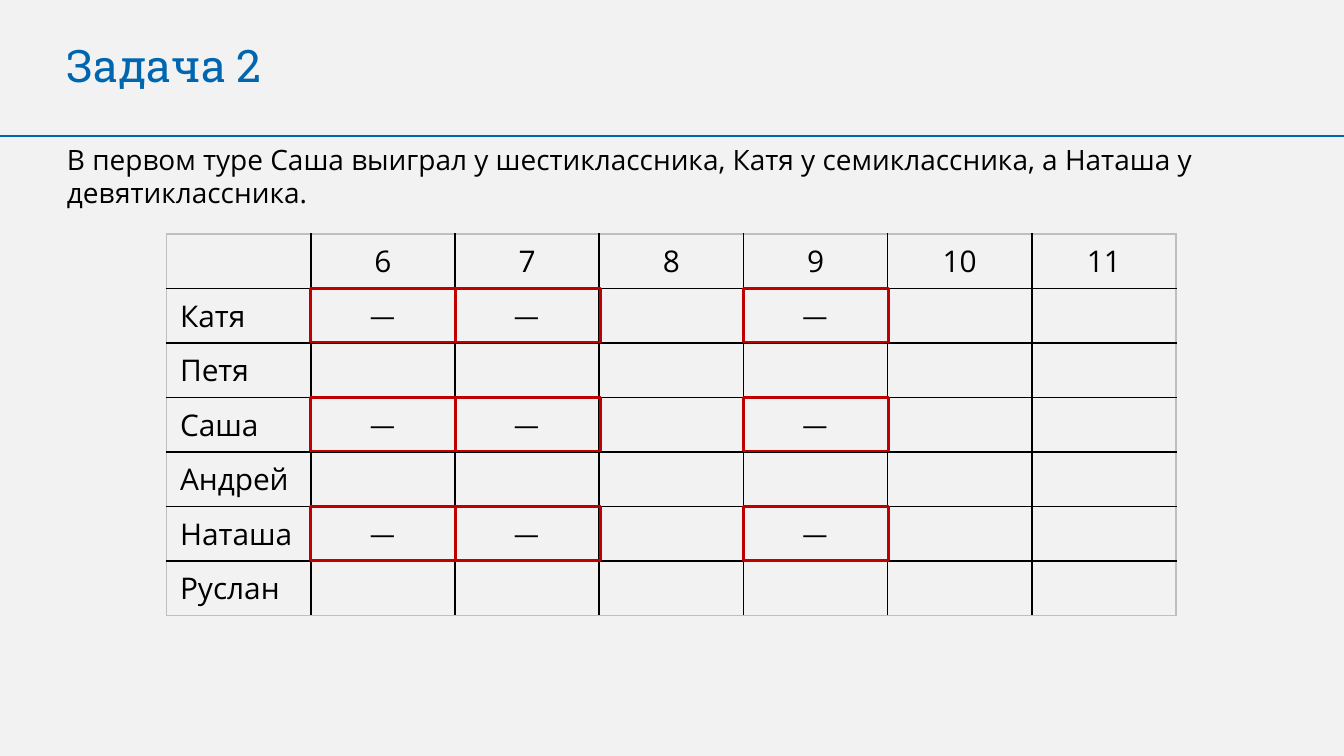
from dataclasses import dataclass
from itertools import product

from lxml.etree import SubElement
from pptx import Presentation
from pptx.dml.color import RGBColor
from pptx.enum.shapes import MSO_CONNECTOR, MSO_SHAPE
from pptx.enum.text import MSO_ANCHOR, MSO_AUTO_SIZE, PP_ALIGN
from pptx.oxml import parse_xml
from pptx.oxml.ns import nsdecls, qn
from pptx.util import Inches, Pt


@dataclass(frozen=True)
class Theme:
    background: str = "F2F2F2"
    accent: str = "0066B0"
    ink: str = "000000"
    frame: str = "BFBFBF"
    mark: str = "C00000"
    heading_font: str = "Roboto Slab"
    body_font: str = "Open Sans"
    heading_size: float = 24
    cell_size: float = 16
    body_size: float = 15
    dash_size: float = 13.5
    rule_width: float = 1
    mark_width: float = 1.5


class TaskSlide:
    """Holds the theme and the current slide and draws each kind of element."""

    def __init__(self, slide, theme):
        self.slide = slide
        self.theme = theme
        fill = slide.background.fill
        fill.solid()
        fill.fore_color.rgb = RGBColor.from_string(theme.background)

    def style(self, paragraph, size, font=None, color=None):
        for run in paragraph.runs:
            run.font.size = Pt(size)
            run.font.name = font or self.theme.body_font
            run.font.color.rgb = RGBColor.from_string(color or self.theme.ink)

    def text(self, words, left, top, width, height, size, font=None, color=None, wrap=True):
        frame = self.slide.shapes.add_textbox(
            Inches(left), Inches(top), Inches(width), Inches(height)).text_frame
        frame.word_wrap = wrap
        frame.auto_size = MSO_AUTO_SIZE.SHAPE_TO_FIT_TEXT
        frame.text = words
        for paragraph in frame.paragraphs:
            self.style(paragraph, size, font, color)
        return frame

    def rule(self, top, width):
        divider = self.slide.shapes.add_connector(
            MSO_CONNECTOR.STRAIGHT, 0, Inches(top), Inches(width), Inches(top))
        divider.line.color.rgb = RGBColor.from_string(self.theme.accent)
        divider.line.width = Pt(self.theme.rule_width)
        SubElement(divider._element.spPr, qn("a:effectLst"))

    def borders(self, cell, outer_sides):
        properties = cell._tc.get_or_add_tcPr()
        for index, side in enumerate("LRTB"):
            color = self.theme.frame if side in outer_sides else self.theme.ink
            properties.insert(index, parse_xml(
                f'<a:ln{side} {nsdecls("a")} w="{Pt(self.theme.rule_width)}"><a:solidFill>'
                f'<a:srgbClr val="{color}"/></a:solidFill></a:ln{side}>'))

    def grid(self, grades, pupils, left, top, width, height):
        rows, columns = len(pupils) + 1, len(grades) + 1
        results = self.slide.shapes.add_table(
            rows, columns, Inches(left), Inches(top), Inches(width), Inches(height)).table
        results.first_row = results.horz_banding = False
        for row, column in product(range(rows), range(columns)):
            cell = results.cell(row, column)
            cell.fill.background()
            cell.vertical_anchor = MSO_ANCHOR.MIDDLE
            cell.margin_top = cell.margin_bottom = Inches(0.03)
            edges = {"L": column == 0, "R": column == columns - 1,
                     "T": row == 0, "B": row == rows - 1}
            self.borders(cell, [side for side, outer in edges.items() if outer])
            if (row == 0) == (column == 0):
                continue
            cell.text_frame.text = grades[column - 1] if row == 0 else pupils[row - 1]
            heading = cell.text_frame.paragraphs[0]
            heading.alignment = PP_ALIGN.CENTER if row == 0 else PP_ALIGN.LEFT
            self.style(heading, self.theme.cell_size)

    def exclusion(self, left, top):
        outline = self.slide.shapes.add_shape(
            MSO_SHAPE.RECTANGLE, Inches(left), Inches(top), Inches(1.08), Inches(0.4))
        outline.shadow.inherit = False
        outline.fill.background()
        outline.line.color.rgb = RGBColor.from_string(self.theme.mark)
        outline.line.width = Pt(self.theme.mark_width)
        self.text("—", left + 0.34, top + 0.04, 0.39, 0.33, self.theme.dash_size, wrap=False)


def main():
    deck = Presentation()
    deck.slide_width = Inches(10)
    deck.slide_height = deck.slide_width * 9 // 16
    theme = Theme()
    task = TaskSlide(deck.slides.add_slide(deck.slide_layouts[6]), theme)

    task.text("Задача 2", 0.4, 0.23, 9.2, 0.5,
              theme.heading_size, theme.heading_font, theme.accent)
    task.rule(1.01, 10)

    grades = ["6", "7", "8", "9", "10", "11"]
    pupils = ["Катя", "Петя", "Саша", "Андрей", "Наташа", "Руслан"]
    left, top, width, height = 1.24, 1.74, 7.51, 2.84
    task.grid(grades, pupils, left, top, width, height)

    condition = task.text(
        "В первом туре Саша выиграл у шестиклассника, Катя у семиклассника, а Наташа у\n"
        "девятиклассника.", 0.4, 1.01, 9.14, 0.61, theme.body_size)
    condition.paragraphs[-1].space_after = Pt(12)

    column_step = width / (len(grades) + 1)
    row_step = height / (len(pupils) + 1)
    for winner, grade in product(["Катя", "Саша", "Наташа"], ["6", "7", "9"]):
        task.exclusion(left + column_step * (grades.index(grade) + 1),
                       top + row_step * (pupils.index(winner) + 1))

    deck.save("out.pptx")


if __name__ == "__main__":
    main()
